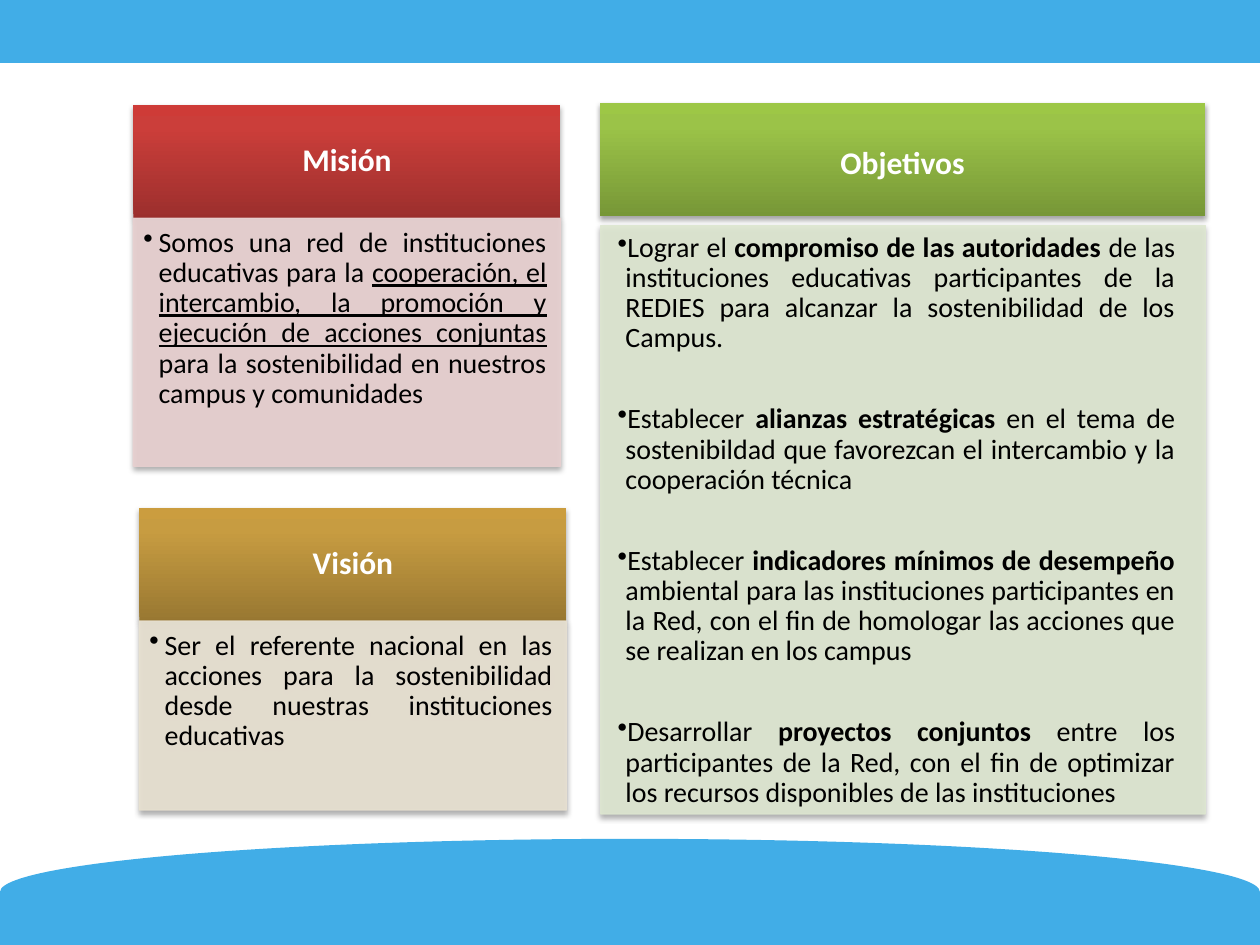
from dataclasses import dataclass

from lxml import etree
from pptx import Presentation
from pptx import util as u
from pptx.dml.color import RGBColor
from pptx.enum import shapes, text
from pptx.oxml.ns import qn

Cm, Pt = u.Cm, u.Pt


@dataclass(frozen=True)
class Theme:
    font: str = "Calibri"
    head: int = 18
    body: int = 16
    white: str = "FFFFFF"
    black: str = "000000"
    blue: str = "41ADE7"
    red: tuple = ("9C2F2D", "CB3E3A", "CE3B37")
    gold: tuple = ("997832", "C79C41", "CB9D3F")
    green: tuple = ("779737", "9BC348", "9DC746")
    rose: str = "E8D0D0"
    sand: str = "E8E1D1"
    sage: str = "DEE7D1"


T = Theme()

MISSION = [[
    "Somos una red de instituciones educativas para la ",
    "cooperación, el intercambio, la promoción y ejecución de acciones conjuntas ",
    "para la sostenibilidad en nuestros campus y comunidades",
]]
VISION = [[
    "Ser el referente nacional en las acciones para la sostenibilidad "
    "desde nuestras instituciones educativas",
]]
GOALS = [
    ["Lograr el ", "compromiso de las autoridades ",
     "de las instituciones educativas participantes de la REDIES "
     "para alcanzar la sostenibilidad de los Campus."],
    ["Establecer ", "alianzas estratégicas ",
     "en el tema de sostenibildad que favorezcan el intercambio y la cooperación técnica"],
    ["Establecer ", "indicadores mínimos de desempeño ",
     "ambiental para las instituciones participantes en la Red, con el fin de "
     "homologar las acciones que se realizan en los campus"],
    ["Desarrollar ", "proyectos conjuntos ",
     "entre los participantes de la Red, con el fin de optimizar "
     "los recursos disponibles de las instituciones"],
]


def add_node(parent, tag, **attrs):
    return etree.SubElement(parent, qn(tag), {k: str(v) for k, v in attrs.items()})


def add_form(slide, kind, box, color):
    form = slide.shapes.add_shape(kind, *map(Cm, box))
    form.shadow.inherit = False
    form.fill.solid()
    form.fill.fore_color.rgb = RGBColor.from_string(color)
    form.line.fill.background()
    return form


def add_shade(form):
    effects = form._element.spPr.find(qn("a:effectLst"))
    shade = add_node(effects, "a:outerShdw", blurRad=Pt(3.1), dist=Pt(1.8),
                     dir=5400000, rotWithShape=0)
    add_node(add_node(shade, "a:srgbClr", val=T.black), "a:alpha", val=35000)


def set_blend(form, colors):
    solid = form._element.spPr.find(qn("a:solidFill"))
    blend = etree.Element(qn("a:gradFill"), rotWithShape="1")
    stops = add_node(blend, "a:gsLst")
    for pos, color in zip((0, 80000, 100000), colors):
        add_node(add_node(stops, "a:gs", pos=pos), "a:srgbClr", val=color)
    add_node(blend, "a:lin", ang=16200000, scaled=0)
    solid.getparent().replace(solid, blend)


def set_frame(form, anchor, inset):
    frame = form.text_frame
    frame.word_wrap = True
    frame.vertical_anchor = anchor
    (frame.margin_left, frame.margin_top,
     frame.margin_right, frame.margin_bottom) = map(Cm, inset)
    return frame


def set_font(run, size, color, bold=False):
    run.font.name = T.font
    run.font.size = Pt(size)
    run.font.bold = bold
    run.font.color.rgb = RGBColor.from_string(color)


def add_head(slide, box, label, colors, top=0.2):
    form = add_form(slide, shapes.MSO_SHAPE.RECTANGLE, box, colors[0])
    set_blend(form, colors)
    add_shade(form)
    frame = set_frame(form, text.MSO_ANCHOR.MIDDLE, (0.36, top, 0.36, 0.2))
    frame.text = label
    para = frame.paragraphs[0]
    para.alignment = text.PP_ALIGN.CENTER
    para.line_spacing = 0.9
    set_font(para.runs[0], T.head, T.white, True)


def add_body(slide, box, color, items, inset, indent, gap=0, mark="underline"):
    form = add_form(slide, shapes.MSO_SHAPE.RECTANGLE, box, color)
    form.line.color.rgb = RGBColor.from_string(color)
    form.line.width = Pt(0.75)
    for tone in form._element.spPr.iter(qn("a:srgbClr")):
        add_node(tone, "a:alpha", val=90000)
    add_shade(form)
    frame = set_frame(form, text.MSO_ANCHOR.TOP, inset)
    for num, parts in enumerate(items):
        para = frame.add_paragraph() if num else frame.paragraphs[0]
        para.alignment = text.PP_ALIGN.JUSTIFY
        para.level = 1
        para.line_spacing = 0.9
        para.space_before = Pt(0)
        para.space_after = Pt(gap)
        props = para._p.get_or_add_pPr()
        props.set("marL", str(Cm(indent)))
        props.set("indent", str(-Cm(indent)))
        add_node(props, "a:buChar", char="•")
        for spot, part in enumerate(parts):
            run = para.add_run()
            run.text = part
            set_font(run, T.body, T.black)
            if spot == 1:
                setattr(run.font, mark, True)


def main():
    deck = Presentation()
    deck.slide_width, deck.slide_height = Cm(25.4), Cm(19.05)
    slide = deck.slides.add_slide(deck.slide_layouts[6])

    add_form(slide, shapes.MSO_SHAPE.RECTANGLE, (0, 0, 25.4, 1.27), T.blue)
    base = add_form(slide, shapes.MSO_SHAPE.FLOWCHART_DELAY,
                    (11.63, 5.28, 2.14, 25.4), T.blue)
    base.rotation = 270

    inset = (0.2, 0.2, 0.28, 0.3)
    add_head(slide, (2.69, 2.12, 8.61, 2.28), "Misión", T.red)
    add_body(slide, (2.69, 4.4, 8.61, 5), T.rose, MISSION, inset, 0.31)
    add_head(slide, (2.81, 10.24, 8.61, 2.28), "Visión", T.gold)
    add_body(slide, (2.81, 12.52, 8.61, 3.81), T.sand, VISION, inset, 0.31)
    add_head(slide, (12.1, 2.08, 12.19, 2.28), "Objetivos", T.green, 0.4)
    add_body(slide, (12.11, 4.55, 12.19, 11.86), T.sage, GOALS,
             (0.34, 0.15, 0.61, 0.23), 0.16, 29, "bold")

    deck.save("out.pptx")


if __name__ == "__main__":
    main()
